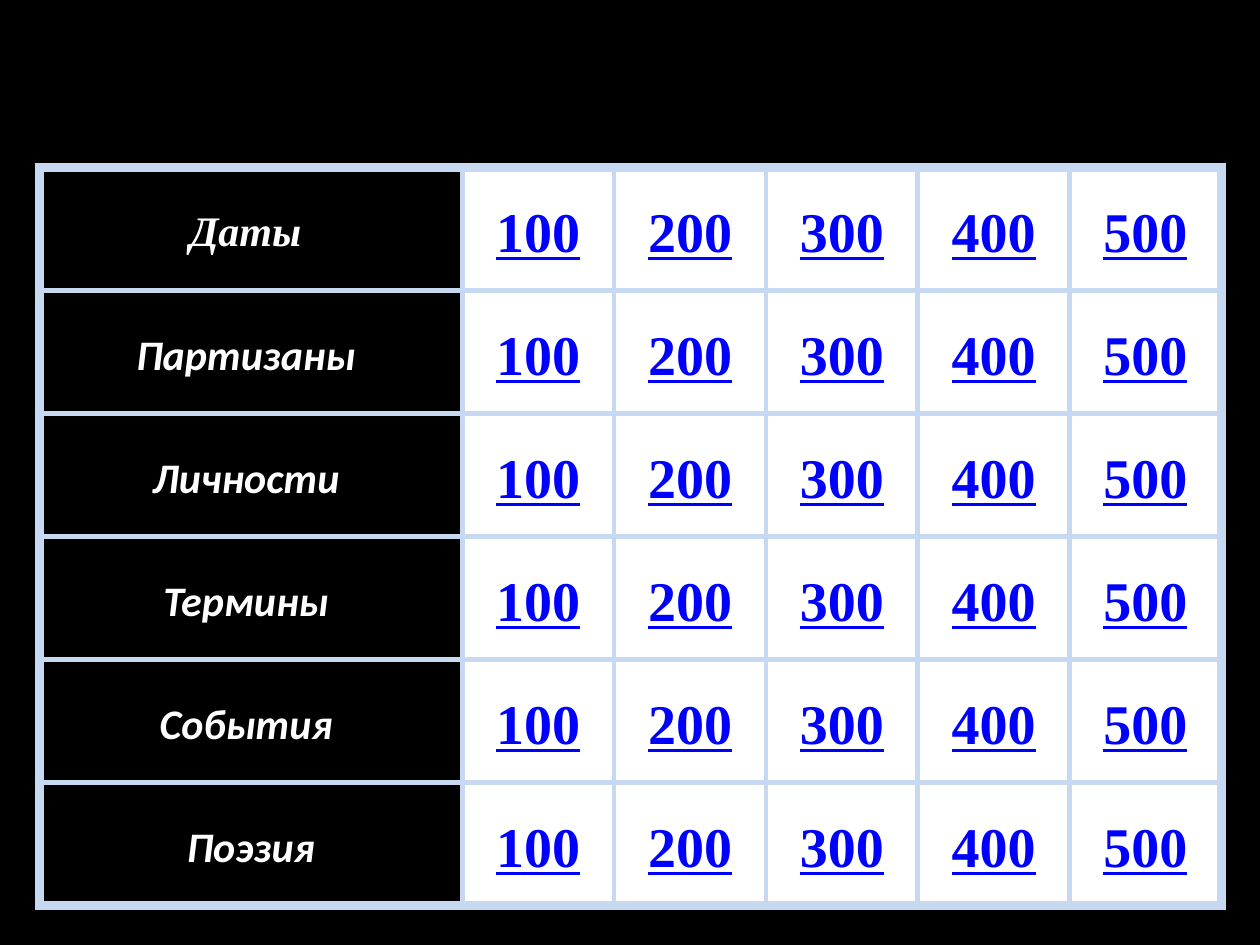
from lxml import etree
from pptx import Presentation
from pptx import util as u
from pptx.dml.color import RGBColor
from pptx.enum import text
from pptx.oxml.ns import qn

COLORS = {"background": "000000", "label": "FFFFFF", "cell": "FFFFFF",
          "points": "0000FF", "border": "C6D9F1"}
CATEGORIES = ["Даты ", "Партизаны ", "Личности ", "Термины ", "События ", "Поэзия"]
POINTS = [100, 200, 300, 400, 500]
INNER_BORDER, OUTER_BORDER = 3, 6

LABEL = {"size": u.Pt(24), "name": "Calibri", "bold": True, "italic": True}
SERIF_LABEL = {**LABEL, "name": "Times New Roman"}
VALUE = {"size": u.Pt(32), "name": "Times New Roman", "bold": True,
         "italic": False, "underline": True}
CELL = {"margin_left": u.Cm(0.18), "margin_right": u.Cm(0.18),
        "margin_top": 0, "margin_bottom": 0,
        "vertical_anchor": text.MSO_ANCHOR.MIDDLE}
PARAGRAPH = {"alignment": text.PP_ALIGN.CENTER, "line_spacing": 1.15}


def apply(target, values):
    for name, value in values.items():
        setattr(target, name, value)


def rgb(color):
    return RGBColor.from_string(COLORS[color])


class QuizBoard:
    """Holds the slide and the style of the question board."""

    def __init__(self, slide):
        self.slide = slide

    def background(self, color):
        fill = self.slide.background.fill
        fill.solid()
        fill.fore_color.rgb = rgb(color)

    def table(self, left, top, column_widths, row_heights):
        frame = self.slide.shapes.add_table(
            len(row_heights), len(column_widths), left, top,
            sum(column_widths), sum(row_heights))
        table = frame.table
        apply(table, {"first_row": False, "horz_banding": False})
        for column, width in zip(table.columns, column_widths):
            column.width = width
        for row, height in zip(table.rows, row_heights):
            row.height = height
        return table

    def borders(self, cell, outer_sides):
        """Draw all four sides, thicker on the sides at the table's edge."""
        properties = cell._tc.get_or_add_tcPr()
        for side in "LRTB":
            width = OUTER_BORDER if side in outer_sides else INNER_BORDER
            line = etree.SubElement(properties, qn(f"a:ln{side}"), w=str(u.Pt(width)))
            fill = etree.SubElement(line, qn("a:solidFill"))
            etree.SubElement(fill, qn("a:srgbClr"), val=COLORS["border"])

    def cell(self, cell, content, font, color, outer_sides, fill=None):
        apply(cell, CELL)
        self.borders(cell, outer_sides)
        if fill:
            cell.fill.solid()
            cell.fill.fore_color.rgb = rgb(fill)
        else:
            cell.fill.background()
        paragraph = cell.text_frame.paragraphs[0]
        apply(paragraph, PARAGRAPH)
        run = paragraph.add_run()
        run.text = content
        apply(run.font, font)
        run.font.color.rgb = rgb(color)


def main():
    presentation = Presentation()
    presentation.slide_width, presentation.slide_height = u.Cm(25.4), u.Cm(19.05)
    blank_layout = presentation.slide_layouts[6]
    board = QuizBoard(presentation.slides.add_slide(blank_layout))
    board.background("background")

    table = board.table(u.Cm(0.79), u.Cm(3.38),
                        [u.Cm(8.53)] + [u.Cm(3.06)] * len(POINTS),
                        [u.Cm(2.48)] * len(CATEGORIES))
    last_row, last_column = len(CATEGORIES) - 1, len(POINTS)
    for row, category in enumerate(CATEGORIES):
        edge = "T" * (row == 0) + "B" * (row == last_row)
        label_font = SERIF_LABEL if row == 0 else LABEL
        board.cell(table.cell(row, 0), category, label_font, "label", edge + "L")
        for column, points in enumerate(POINTS, start=1):
            board.cell(table.cell(row, column), str(points), VALUE, "points",
                       edge + "R" * (column == last_column), "cell")

    presentation.save("out.pptx")


if __name__ == "__main__":
    main()
